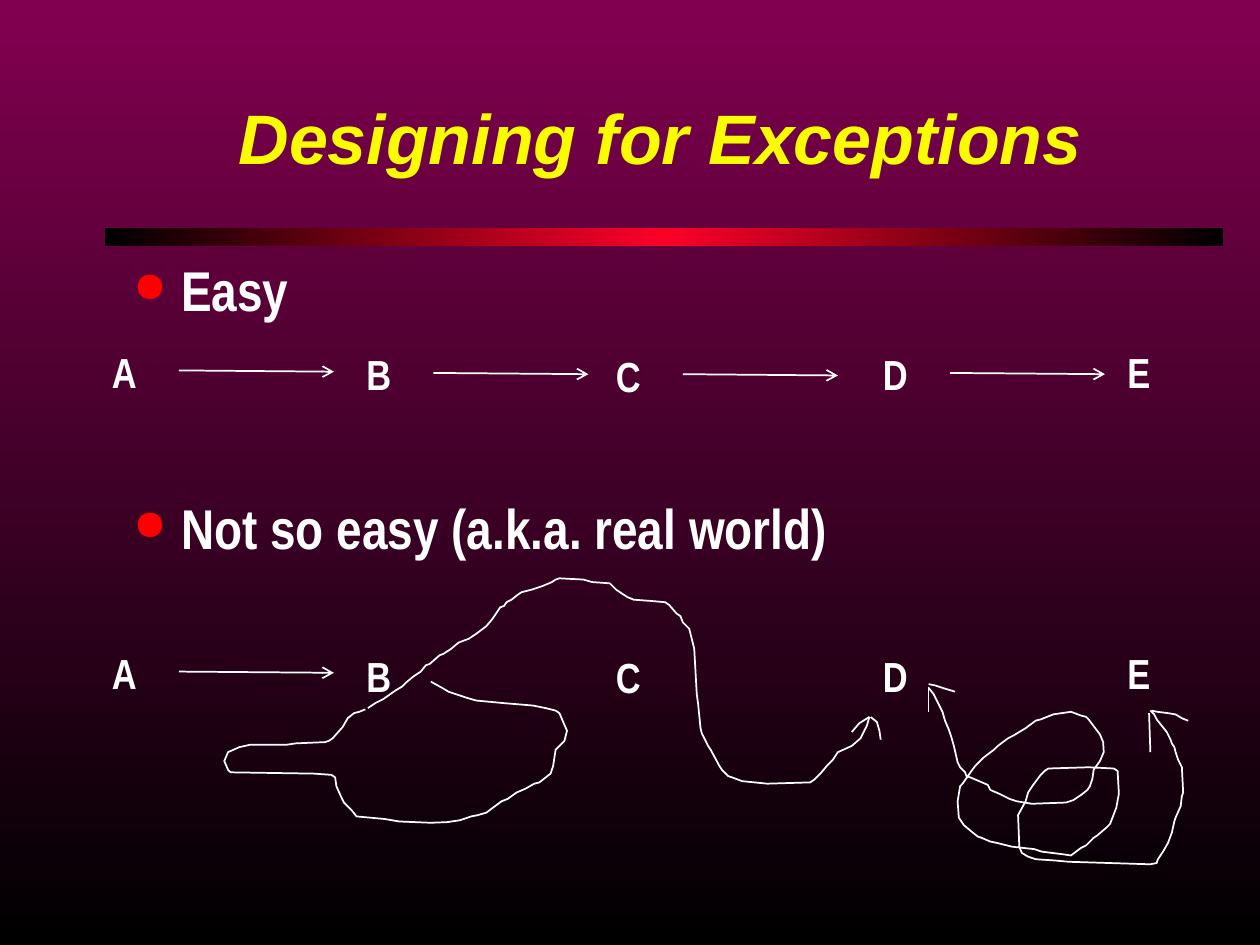
import pptx
import pptx.util
import pptx.dml.color
import pptx.enum.shapes
import pptx.enum.text
import pptx.oxml.ns
from lxml import etree

Inches = pptx.util.Inches
Pt = pptx.util.Pt
qn = pptx.oxml.ns.qn

WHITE = "FFFFFF"
TITLE = "Designing for Exceptions"
BULLETS = [("Easy", 0), ("Not so easy (a.k.a. real world)", 97.5)]
STEPS = [("A", 0.79, 0), ("B", 2.81, 0.02), ("C", 4.79, 0.03), ("D", 6.91, 0.02), ("E", 8.85, 0)]
ROWS = [(2.7, 4), (5.09, 1)]
ARROW_OFFSET = (0.63, 0.24)
ARROW_SIZE = (1.23, 0.01)

TITLE_FORMAT = {"name": "Arial", "size": Pt(40), "bold": True, "italic": True}
BULLET_FORMAT = {"name": "Arial Narrow", "size": Pt(32), "bold": True}
STEP_FORMAT = {"name": "Arial Narrow", "size": Pt(24), "bold": True}

LOOP_BACK_TO_B = [
    (3.42, 5.41), (3.51, 5.46), (3.56, 5.49), (3.71, 5.54), (3.78, 5.56), (3.99, 5.58),
    (4.23, 5.6), (4.33, 5.62), (4.41, 5.64), (4.44, 5.66), (4.47, 5.73), (4.5, 5.8),
    (4.48, 5.88), (4.43, 5.93), (4.41, 5.95), (4.39, 6.08), (4.37, 6.14), (4.28, 6.21),
    (4.24, 6.22), (4.17, 6.26), (4.1, 6.29), (4.03, 6.34), (3.98, 6.36), (3.9, 6.42),
    (3.86, 6.45), (3.79, 6.47), (3.74, 6.48), (3.65, 6.51), (3.55, 6.525), (3.42, 6.53),
    (3.17, 6.52), (3.05, 6.5), (2.83, 6.48), (2.79, 6.43), (2.73, 6.37), (2.71, 6.33),
    (2.67, 6.24), (2.66, 6.17), (2.63, 6.15), (2.49, 6.14), (1.83, 6.13), (1.81, 6.11),
    (1.78, 6.04), (1.81, 5.97), (1.9, 5.93), (1.99, 5.91), (2.28, 5.91), (2.35, 5.9),
    (2.58, 5.89), (2.61, 5.88), (2.64, 5.86), (2.72, 5.77), (2.76, 5.7), (2.81, 5.66),
    (2.85, 5.65), (2.9, 5.63)]
DETOUR_TO_D = [
    (2.92, 5.62), (2.98, 5.58), (3.04, 5.55), (3.14, 5.48), (3.19, 5.45), (3.22, 5.42),
    (3.28, 5.37), (3.34, 5.33), (3.38, 5.28), (3.41, 5.27), (3.49, 5.2), (3.52, 5.19),
    (3.58, 5.15), (3.64, 5.1), (3.72, 5.07), (3.78, 5.03), (3.86, 4.97), (3.91, 4.91),
    (3.95, 4.85), (3.97, 4.82), (4, 4.81), (4.02, 4.78), (4.06, 4.76), (4.11, 4.72),
    (4.14, 4.7), (4.22, 4.68), (4.31, 4.65), (4.38, 4.62), (4.41, 4.6), (4.44, 4.59),
    (4.63, 4.6), (4.7, 4.62), (4.84, 4.63), (4.89, 4.68), (4.95, 4.72), (4.98, 4.74),
    (5.03, 4.76), (5.17, 4.77), (5.28, 4.78), (5.31, 4.8), (5.37, 4.87), (5.4, 4.89),
    (5.42, 4.94), (5.47, 4.99), (5.5, 5.11), (5.51, 5.15), (5.53, 5.51), (5.54, 5.58),
    (5.56, 5.78), (5.57, 5.82), (5.6, 5.88), (5.62, 5.92), (5.64, 5.95), (5.71, 6.08),
    (5.73, 6.11), (5.78, 6.16), (5.81, 6.17), (5.89, 6.2), (6.09, 6.22), (6.43, 6.21),
    (6.46, 6.19), (6.52, 6.13), (6.57, 6.07), (6.61, 6.03), (6.65, 5.97), (6.76, 5.92),
    (6.83, 5.86), (6.88, 5.76), (6.9, 5.69)]
TANGLE_FROM_D_TO_E = [
    (7.37, 5.46), (7.41, 5.51), (7.43, 5.55), (7.46, 5.61), (7.48, 5.65), (7.5, 5.72),
    (7.53, 5.79), (7.55, 5.85), (7.57, 5.92), (7.6, 6.05), (7.62, 6.09), (7.66, 6.13),
    (7.67, 6.16), (7.7, 6.17), (7.77, 6.2), (7.84, 6.23), (7.86, 6.27), (7.93, 6.3),
    (8.01, 6.34), (8.07, 6.36), (8.19, 6.38), (8.46, 6.37), (8.52, 6.35), (8.58, 6.31),
    (8.63, 6.27), (8.65, 6.24), (8.67, 6.18), (8.68, 6.11), (8.73, 6.04), (8.76, 5.97),
    (8.755, 5.89), (8.73, 5.83), (8.64, 5.71), (8.62, 5.69), (8.58, 5.68), (8.5, 5.65),
    (8.36, 5.67), (8.26, 5.71), (8.22, 5.72), (8.14, 5.78), (8.04, 5.84), (8, 5.86),
    (7.92, 5.92), (7.89, 5.95), (7.81, 6.01), (7.74, 6.08), (7.71, 6.12), (7.64, 6.22),
    (7.62, 6.24), (7.6, 6.36), (7.61, 6.49), (7.65, 6.55), (7.71, 6.6), (7.76, 6.64),
    (7.79, 6.65), (7.86, 6.68), (7.91, 6.69), (8.03, 6.72), (8.21, 6.74), (8.27, 6.76),
    (8.43, 6.78), (8.5, 6.79), (8.58, 6.73), (8.62, 6.71), (8.68, 6.65), (8.71, 6.63),
    (8.78, 6.57), (8.81, 6.54), (8.86, 6.41), (8.88, 6.3), (8.87, 6.12), (8.84, 6.1),
    (8.64, 6.09), (8.32, 6.1), (8.29, 6.12), (8.26, 6.15), (8.2, 6.23), (8.16, 6.29),
    (8.14, 6.36), (8.08, 6.47), (8.09, 6.72), (8.11, 6.77), (8.16, 6.8), (8.22, 6.82),
    (8.37, 6.83), (8.48, 6.84), (9.13, 6.86), (9.18, 6.85), (9.19, 6.82), (9.23, 6.76),
    (9.27, 6.69), (9.3, 6.61), (9.32, 6.52), (9.33, 6.49), (9.37, 6.4), (9.38, 6.32),
    (9.39, 6.29), (9.38, 6.09), (9.35, 6.03), (9.33, 5.97), (9.32, 5.93), (9.3, 5.9),
    (9.29, 5.87), (9.26, 5.81), (9.18, 5.71), (9.16, 5.67), (9.13, 5.64)]
HAND_DRAWN = [
    LOOP_BACK_TO_B,
    DETOUR_TO_D,
    [(6.9, 5.69), (6.82, 5.74), (6.76, 5.81)],
    [(6.91, 5.69), (6.96, 5.73), (6.98, 5.8), (6.99, 5.87)],
    TANGLE_FROM_D_TO_E,
    [(7.37, 5.43), (7.42, 5.44), (7.48, 5.46), (7.58, 5.49)],
    [(9.14, 5.64), (9.19, 5.65), (9.27, 5.66), (9.33, 5.67), (9.38, 5.7), (9.43, 5.72)],
]
HEAD_STROKES = [(7.37, 5.45, 7.37, 5.65), (9.12, 5.66, 9.13, 5.97)]


def color(value):
    return pptx.dml.color.RGBColor.from_string(value)


def set_gradient(owner, fill, angle, stops):
    fill.gradient()
    fill.gradient_angle = angle
    stop_list = owner.find(".//" + qn("a:gsLst"))
    for stop in list(stop_list):
        stop_list.remove(stop)
    for position, value in stops:
        stop = etree.SubElement(stop_list, qn("a:gs"), pos=str(position * 1000))
        etree.SubElement(stop, qn("a:srgbClr"), val=value)


def add_text_box(slide, left, top, width, height):
    frame = slide.shapes.add_textbox(*map(Inches, (left, top, width, height))).text_frame
    frame.word_wrap = True
    return frame


def write(paragraph, text, font_format, value=WHITE):
    paragraph.text = text
    font = paragraph.runs[0].font
    for name, setting in font_format.items():
        setattr(font, name, setting)
    font.color.rgb = color(value)


def add_bullet(paragraph):
    properties = paragraph._p.get_or_add_pPr()
    properties.set("marL", str(Inches(0.38)))
    properties.set("indent", str(-Inches(0.38)))
    bullet_color = etree.SubElement(properties, qn("a:buClr"))
    etree.SubElement(bullet_color, qn("a:srgbClr"), val="FF0000")
    etree.SubElement(properties, qn("a:buSzPct"), val="75000")
    etree.SubElement(properties, qn("a:buChar"), char="●")


def style_line(shape):
    shape.line.color.rgb = color(WHITE)
    shape.line.width = Pt(1)


def add_line(slide, ends, arrow=False):
    line = slide.shapes.add_connector(
        pptx.enum.shapes.MSO_CONNECTOR.STRAIGHT, *map(Inches, ends))
    style_line(line)
    if arrow:
        etree.SubElement(line.line._get_or_add_ln(), qn("a:tailEnd"), type="arrow")
    etree.SubElement(line._element.spPr, qn("a:effectLst"))


def add_stroke(slide, points):
    start, *others = [tuple(map(Inches, point)) for point in points]
    builder = slide.shapes.build_freeform(*start)
    builder.add_line_segments(others, close=False)
    stroke = builder.convert_to_shape()
    stroke.shadow.inherit = False
    stroke.fill.background()
    style_line(stroke)


def main():
    presentation = pptx.Presentation()
    presentation.slide_width = Inches(10)
    presentation.slide_height = Inches(7.5)
    slide = presentation.slides.add_slide(presentation.slide_layouts[6])
    set_gradient(slide._element, slide.background.fill, 270, [(0, "820050"), (100, "000000")])

    bar = slide.shapes.add_shape(
        pptx.enum.shapes.MSO_SHAPE.RECTANGLE, *map(Inches, (0.83, 1.81, 8.88, 0.14)))
    bar.shadow.inherit = False
    bar.line.fill.background()
    set_gradient(bar._element, bar.fill, 0, [(0, "000000"), (50, "FC0128"), (100, "000000")])

    title = add_text_box(slide, 0.76, 0.46, 8.96, 1.25)
    title.vertical_anchor = pptx.enum.text.MSO_ANCHOR.MIDDLE
    title.paragraphs[0].alignment = pptx.enum.text.PP_ALIGN.CENTER
    write(title.paragraphs[0], TITLE, TITLE_FORMAT, "FAFD00")

    body = add_text_box(slide, 0.96, 1.98, 8.69, 2.58)
    for index, (text, space) in enumerate(BULLETS):
        paragraph = body.add_paragraph() if index else body.paragraphs[0]
        if space:
            paragraph.space_before = Pt(space)
        add_bullet(paragraph)
        write(paragraph, text, BULLET_FORMAT)

    for row_top, arrow_count in ROWS:
        for index, (letter, left, drop) in enumerate(STEPS):
            top = row_top + drop
            write(add_text_box(slide, left, top, 0.44, 0.5).paragraphs[0], letter, STEP_FORMAT)
            if index < arrow_count:
                x, y = left + ARROW_OFFSET[0], top + ARROW_OFFSET[1]
                add_line(slide, (x, y, x + ARROW_SIZE[0], y + ARROW_SIZE[1]), arrow=True)

    for points in HAND_DRAWN:
        add_stroke(slide, points)
    for ends in HEAD_STROKES:
        add_line(slide, ends)
    presentation.save("out.pptx")


if __name__ == "__main__":
    main()
